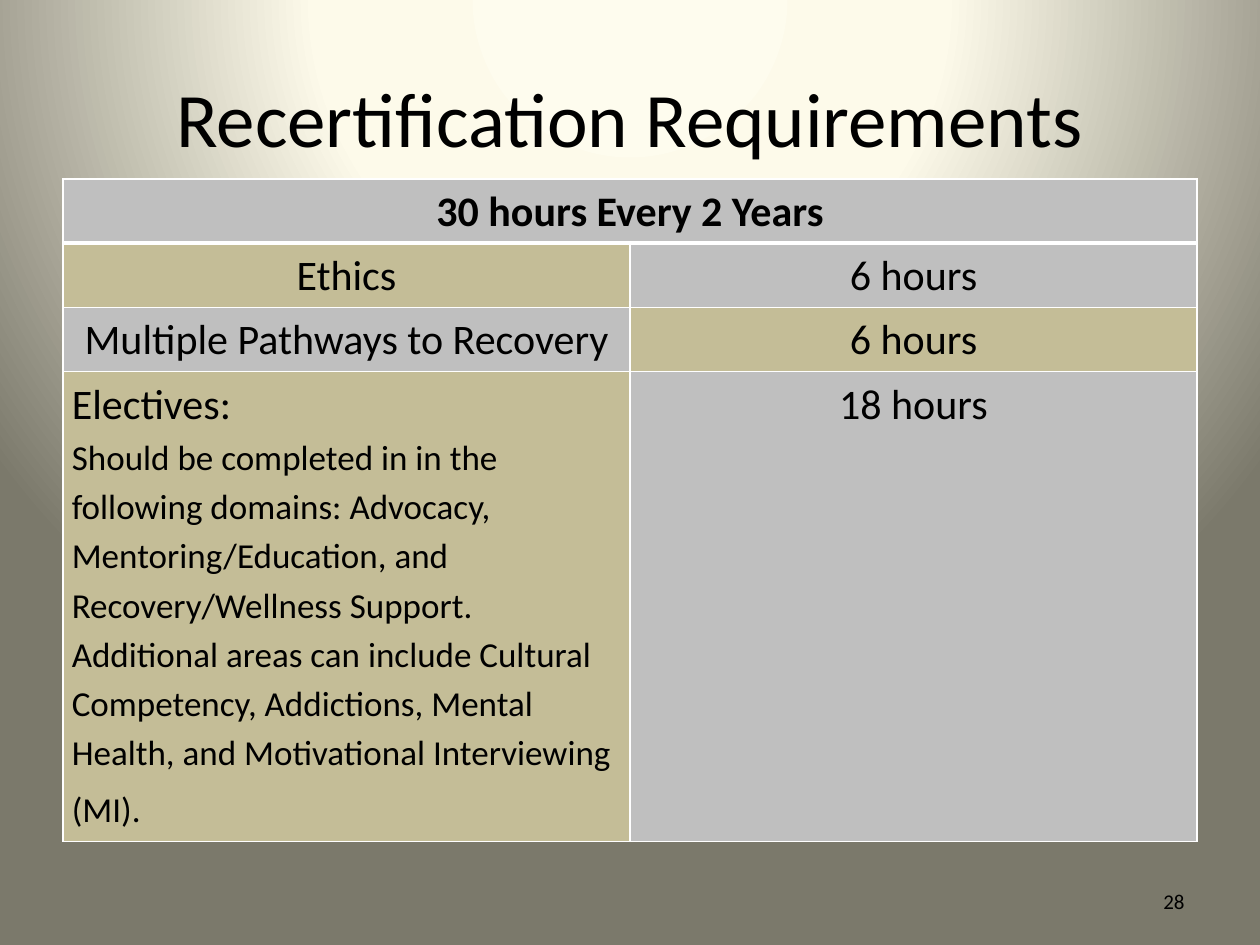
"""Build the recertification requirements slide."""
from dataclasses import dataclass

from lxml import etree
from pptx import Presentation
from pptx.dml.color import RGBColor
from pptx.enum.text import MSO_ANCHOR, PP_ALIGN
from pptx.oxml import parse_xml
from pptx.oxml.ns import nsdecls, qn
from pptx.util import Inches, Pt

LEFT, CENTER, RIGHT = PP_ALIGN.LEFT, PP_ALIGN.CENTER, PP_ALIGN.RIGHT
MIDDLE = MSO_ANCHOR.MIDDLE
BLACK = RGBColor(0x00, 0x00, 0x00)
WHITE = RGBColor(0xFF, 0xFF, 0xFF)
GRAY = RGBColor(0xBF, 0xBF, 0xBF)
TAN = RGBColor(0xC4, 0xBD, 0x97)
CREAM = RGBColor(0xFE, 0xFC, 0xEE)
IVORY = RGBColor(0xFD, 0xFA, 0xEA)
OLIVE = RGBColor(0x7B, 0x79, 0x6B)
FONT = "Calibri"
GRADIENT = ((0, CREAM), (40, IVORY), (100, OLIVE))
ROW_HEIGHTS = (0.51, 0.51, 0.51, 3.73)
COL_WIDTH = 4.5
ELECTIVES = (
    "Should be completed in in the following domains: Advocacy, "
    "Mentoring/Education, and Recovery/Wellness Support. Additional areas can "
    "include Cultural Competency, Addictions, Mental Health, and Motivational "
    "Interviewing (MI)."
)


@dataclass
class Label:
    text: str
    left: float
    top: float
    width: float
    height: float
    size: int
    align: PP_ALIGN


@dataclass
class Entry:
    row: int
    col: int
    text: str
    fill: RGBColor
    align: PP_ALIGN = CENTER
    bold: bool = False


LABELS = (
    Label("Recertification Requirements", 0.5, 0.3, 9, 1.25, 44, CENTER),
    Label("28", 7.17, 6.95, 2.33, 0.4, 12, RIGHT),
)
ENTRIES = (
    Entry(0, 0, "30 hours Every 2 Years", GRAY, bold=True),
    Entry(1, 0, "Ethics", TAN),
    Entry(1, 1, "6 hours", GRAY),
    Entry(2, 0, "Multiple Pathways to Recovery", GRAY),
    Entry(2, 1, "6 hours", TAN),
    Entry(3, 0, "Electives:", TAN, LEFT),
    Entry(3, 1, "18 hours", GRAY),
)


def set_background(s) -> None:
    s.background.fill.solid()
    bg = s.element.find(".//" + qn("p:bgPr"))
    stops = "".join(
        f'<a:gs pos="{pos * 1000}"><a:srgbClr val="{color}"/></a:gs>'
        for pos, color in GRADIENT
    )
    bg.replace(bg[0], parse_xml(
        f'<a:gradFill {nsdecls("a")} rotWithShape="1"><a:gsLst>{stops}</a:gsLst>'
        '<a:path path="circle"><a:fillToRect l="50000" t="-80000" r="50000" '
        'b="180000"/></a:path></a:gradFill>'
    ))


def format_run(r, size: int, bold: bool = False) -> None:
    r.font.name = FONT
    r.font.size = Pt(size)
    r.font.bold = bold
    r.font.color.rgb = BLACK


def add_label(s, label: Label) -> None:
    box = (label.left, label.top, label.width, label.height)
    tf = s.shapes.add_textbox(*map(Inches, box)).text_frame
    tf.word_wrap = True
    tf.vertical_anchor = MIDDLE
    tf.text = label.text
    p = tf.paragraphs[0]
    p.alignment = label.align
    format_run(p.runs[0], label.size)


def set_borders(cell, row: int) -> None:
    tc_pr = cell._tc.get_or_add_tcPr()
    widths = {"L": 1, "R": 1, "T": 3 if row == 1 else 1, "B": 3 if row == 0 else 1}
    for side, width in widths.items():
        ln = etree.SubElement(tc_pr, qn(f"a:ln{side}"), w=str(Pt(width)))
        fill = etree.SubElement(ln, qn("a:solidFill"))
        etree.SubElement(fill, qn("a:srgbClr"), val=str(WHITE))


def fill_cell(cell, entry: Entry) -> None:
    cell.margin_left = cell.margin_right = Inches(0.07)
    cell.margin_top = cell.margin_bottom = 0
    cell.fill.solid()
    cell.fill.fore_color.rgb = entry.fill
    p = cell.text_frame.paragraphs[0]
    p.text = entry.text
    p.alignment = entry.align
    p.line_spacing = 1.15
    format_run(p.runs[0], 24, entry.bold)


def add_requirements(s) -> None:
    frame = s.shapes.add_table(
        len(ROW_HEIGHTS), 2, Inches(0.5), Inches(1.42),
        Inches(2 * COL_WIDTH), Inches(sum(ROW_HEIGHTS)),
    )
    table = frame.table
    for col in table.columns:
        col.width = Inches(COL_WIDTH)
    for row, height in enumerate(ROW_HEIGHTS):
        table.rows[row].height = Inches(height)
        for cell in table.rows[row].cells:
            set_borders(cell, row)
    table.cell(0, 0).merge(table.cell(0, 1))
    for entry in ENTRIES:
        fill_cell(table.cell(entry.row, entry.col), entry)
    p = table.cell(3, 0).text_frame.add_paragraph()
    p.line_spacing = 1.15
    for text, size in ((ELECTIVES, 20), (" ", 24)):
        r = p.add_run()
        r.text = text
        format_run(r, size)


def main() -> None:
    prs = Presentation()
    prs.slide_width, prs.slide_height = Inches(10), Inches(7.5)
    s = prs.slides.add_slide(prs.slide_layouts[6])
    set_background(s)
    add_requirements(s)
    for label in LABELS:
        add_label(s, label)
    prs.save("out.pptx")


if __name__ == "__main__":
    main()
